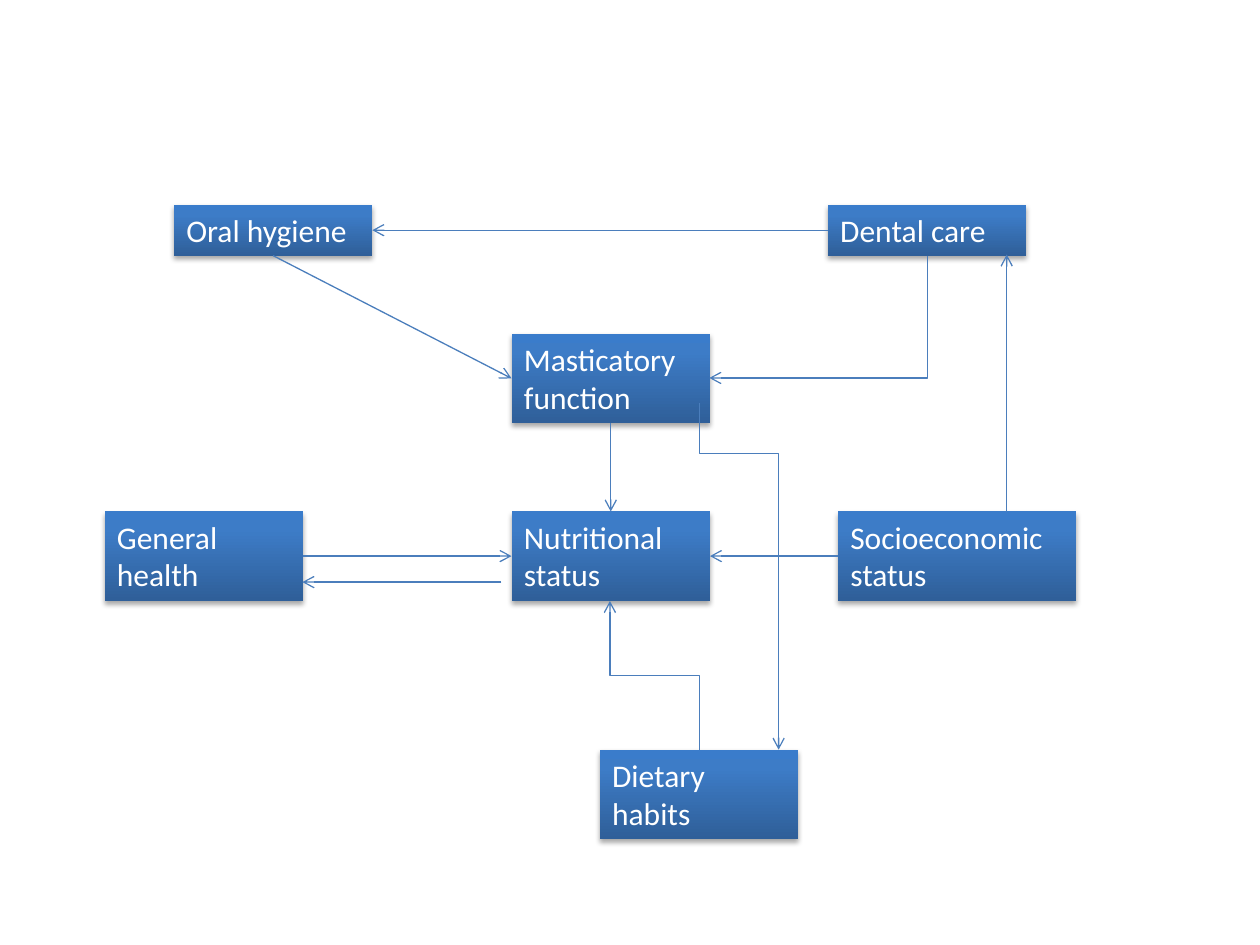
from copy import deepcopy
from dataclasses import dataclass

from lxml import etree
from pptx import Presentation
from pptx.dml.color import RGBColor
from pptx.enum.shapes import MSO_CONNECTOR, MSO_SHAPE
from pptx.enum.text import MSO_ANCHOR, MSO_AUTO_SIZE, PP_ALIGN
from pptx.oxml import parse_xml
from pptx.oxml.ns import nsdecls, qn
from pptx.util import Inches, Pt

RECT = MSO_SHAPE.RECTANGLE
LINE, BENT = MSO_CONNECTOR.STRAIGHT, MSO_CONNECTOR.ELBOW
TOP, LEFT, BASE, RIGHT = range(4)

COLS, ROWS = 100, 75  # square grid over the slide
UNIT = Inches(0.1)
WIDE, TALL, LOW = 15.75, 7.07, 4.04
MID = 40.6  # left edge of the centre column
ROW = 40.6  # top of the status row

HUES = {"dark": "2F5F99", "mid": "3D7CC7", "light": "3A7CCB",
        "line": "4B7EBC", "text": "FFFFFF"}
STOPS = [(0, "dark"), (0.8, "mid"), (1, "light")]
FRAME = {"word_wrap": True, "vertical_anchor": MSO_ANCHOR.TOP,
         "auto_size": MSO_AUTO_SIZE.SHAPE_TO_FIT_TEXT}
FONT = {"name": "Calibri", "size": Pt(18)}
SHADE = (f'<a:effectLst {nsdecls("a")}><a:outerShdw blurRad="{Pt(3.1)}" '
         f'dist="{Pt(1.8)}" dir="5400000" rotWithShape="0"><a:srgbClr val="000000">'
         '<a:alpha val="35000"/></a:srgbClr></a:outerShdw></a:effectLst>')


@dataclass
class Box:
    text: str
    x: float
    y: float
    w: float = WIDE
    h: float = TALL


@dataclass
class Link:
    """Straight arrow between two box sides."""
    start: str
    out: int
    end: str
    into: int


@dataclass
class Bend:
    """Elbow arrow that leaves vertically, as a turned connector."""
    start: tuple
    end: tuple
    turn: int
    preset: str = "bentConnector3"
    adj: float | None = None


BOXES = {
    "chew": Box("Masticatory function", MID, 26.5),
    "health": Box("General health", 8.3, ROW),
    "food": Box("Nutritional status", MID, ROW),
    "mouth": Box("Oral hygiene", 13.8, 16.25, h=LOW),
    "care": Box("Dental care", 65.7, 16.25, h=LOW),
    "social": Box("Socioeconomic status", 66.5, ROW, w=18.9),
    "diet": Box("Dietary habits", 47.6, 59.5),
}
LINKS = [
    Link("social", LEFT, "food", RIGHT),
    Link("chew", BASE, "food", TOP),
    Link("health", RIGHT, "food", LEFT),
    Link("care", LEFT, "mouth", RIGHT),
    Link("mouth", BASE, "chew", LEFT),
]
BENDS = [
    Bend((73.6, 20.3), (56.3, 30), 90, "bentConnector2"),
    Bend((55.5, 32), (61.8, 59.5), 270, adj=0.146),
    Bend((55.5, 59.5), (48.4, 47.7), 270, adj=0.5),
]
FREE = [((39.8, 46.2), (24, 46.2)), ((79.9, 40.6), (79.9, 20.2))]


def grid(*vals: float) -> list[int]:
    return [round(val * UNIT) for val in vals]


def style(item, vals: dict) -> None:
    for key, val in vals.items():
        setattr(item, key, val)


def hue(key: str) -> RGBColor:
    return RGBColor.from_string(HUES[key])


def add_box(shapes, box: Box):
    shape = shapes.add_shape(RECT, *grid(box.x, box.y, box.w, box.h))
    shape.line.fill.background()
    # Gradient with a third stop
    fill = shape.fill
    fill.gradient()
    fill.gradient_angle = 90
    stops = shape._element.spPr.find(".//" + qn("a:gsLst"))
    stops.append(deepcopy(stops[-1]))
    for stop, (pos, key) in zip(fill.gradient_stops, STOPS):
        stop.position = pos
        stop.color.rgb = hue(key)
    shape._element.spPr.append(parse_xml(SHADE))
    # Label
    frame = shape.text_frame
    style(frame, FRAME)
    frame.text = box.text
    para = frame.paragraphs[0]
    para.alignment = PP_ALIGN.LEFT
    font = para.runs[0].font
    style(font, FONT)
    font.color.rgb = hue("text")
    return shape


def add_arrow(shapes, kind, start: tuple, end: tuple):
    arrow = shapes.add_connector(kind, *grid(*start, *end))
    arrow.line.width = Pt(0.75)
    arrow.line.color.rgb = hue("line")
    etree.SubElement(arrow.line._get_or_add_ln(), qn("a:tailEnd"), type="arrow")
    etree.SubElement(arrow._element.spPr, qn("a:effectLst"))
    return arrow


def add_bend(shapes, bend: Bend) -> None:
    (x1, y1), (x2, y2) = bend.start, bend.end
    sign = 1 if bend.turn == 90 else -1
    # Half extents before the turn, about the shared centre
    dx, dy = sign * (y2 - y1) / 2, sign * (x1 - x2) / 2
    cx, cy = (x1 + x2) / 2, (y1 + y2) / 2
    arrow = add_arrow(shapes, BENT, (cx - dx, cy - dy), (cx + dx, cy + dy))
    props = arrow._element.spPr
    props.find(qn("a:xfrm")).set("rot", str(bend.turn * 60000))
    geom = props.find(qn("a:prstGeom"))
    geom.set("prst", bend.preset)
    if bend.adj is not None:
        guides = geom.find(qn("a:avLst"))
        etree.SubElement(guides, qn("a:gd"), name="adj1",
                         fmla=f"val {round(bend.adj * 100000)}")


def main() -> None:
    deck = Presentation()
    deck.slide_width, deck.slide_height = COLS * UNIT, ROWS * UNIT
    shapes = deck.slides.add_slide(deck.slide_layouts[6]).shapes

    # Factors
    made = {key: add_box(shapes, box) for key, box in BOXES.items()}

    # Arrows
    for link in LINKS:
        arrow = add_arrow(shapes, LINE, (0, 0), (0, 0))
        arrow.begin_connect(made[link.start], link.out)
        arrow.end_connect(made[link.end], link.into)
    for bend in BENDS:
        add_bend(shapes, bend)
    for start, end in FREE:
        add_arrow(shapes, LINE, start, end)

    deck.save("out.pptx")


if __name__ == "__main__":
    main()
